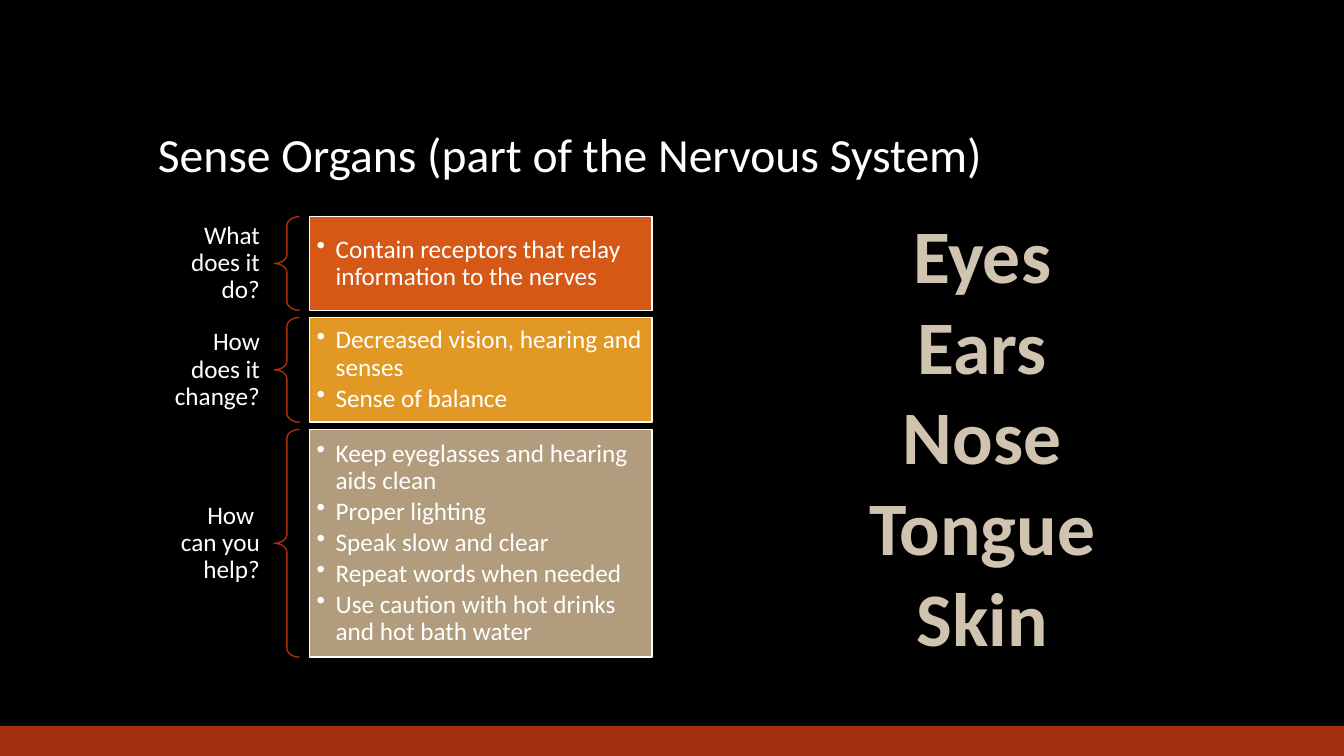
from dataclasses import dataclass

from lxml.etree import SubElement
from pptx import Presentation
from pptx.dml.color import RGBColor
from pptx.enum.shapes import MSO_SHAPE as Preset
from pptx.enum.text import MSO_ANCHOR as Anchor, PP_ALIGN as Align
from pptx.oxml.ns import qn
from pptx.util import Cm, Pt


@dataclass(frozen=True)
class Theme:
    font: str = "Calibri"
    title_size: int = 34
    body_size: int = 18
    organ_size: int = 54
    background: str = "000000"
    text: str = "FFFFFF"
    accent: str = "A5300F"
    organ: str = "D0C4B1"
    purpose: str = "D55816"
    change: str = "E19825"
    care: str = "B19C7D"


THEME = Theme()

TOPICS = [
    ("What does it do?", THEME.purpose, 2.36,
     ["Contain receptors that relay information to the nerves"]),
    ("How does it change?", THEME.change, 2.64,
     ["Decreased vision, hearing and senses", "Sense of balance"]),
    ("How \ncan you help?", THEME.care, 5.74,
     ["Keep eyeglasses and hearing aids clean",
      "Proper lighting",
      "Speak slow and clear",
      "Repeat words when needed",
      "Use caution with hot drinks and hot bath water"]),
]
ORGANS = ["Eyes", "Ears", "Nose", "Tongue", "Skin"]


def rgb(code):
    return RGBColor.from_string(code)


def add_preset(slide, preset, left, top, width, height, fill=None, line=None):
    shape = slide.shapes.add_shape(preset, Cm(left), Cm(top), Cm(width), Cm(height))
    shape.shadow.inherit = False
    if fill:
        shape.fill.solid()
        shape.fill.fore_color.rgb = rgb(fill)
    else:
        shape.fill.background()
    if line:
        shape.line.color.rgb = rgb(line)
        shape.line.width = Pt(1)
    else:
        shape.line.fill.background()
    return shape


def set_frame(frame, anchor, side=0.25, edge=0.13, wrap=True):
    frame.word_wrap = wrap
    frame.vertical_anchor = anchor
    frame.margin_left = frame.margin_right = Cm(side)
    frame.margin_top = frame.margin_bottom = Cm(edge)


def write(frame, lines, size, align=Align.LEFT, color=THEME.text, bold=False, spacing=0.9):
    for index, line in enumerate(lines):
        paragraph = frame.add_paragraph() if index else frame.paragraphs[0]
        paragraph.text = line
        paragraph.alignment = align
        paragraph.line_spacing = spacing
        for run in paragraph.runs:
            run.font.name = THEME.font
            run.font.size = Pt(size)
            run.font.bold = bold
            run.font.color.rgb = rgb(color)


def add_bullets(frame, indent):
    for paragraph in frame.paragraphs:
        paragraph.level = 1
        paragraph.space_after = Pt(2.7)
        properties = paragraph._p.get_or_add_pPr()
        properties.set("marL", str(Cm(indent)))
        properties.set("indent", str(-Cm(indent)))
        SubElement(properties, qn("a:buChar"), char="•")


def add_title(slide, left, top, width, height):
    title = slide.shapes.add_textbox(Cm(left), Cm(top), Cm(width), Cm(height))
    set_frame(title.text_frame, Anchor.BOTTOM)
    write(title.text_frame, ["Sense Organs (part of the Nervous System)"], THEME.title_size)


def add_topic(slide, left, top, width, height, question, fill, answers):
    question_width, brace_width, gap = 3.18, 0.64, 0.25
    brace_left = left + question_width
    answer_left = brace_left + brace_width + gap

    label = slide.shapes.add_textbox(Cm(left), Cm(top), Cm(question_width), Cm(height))
    set_frame(label.text_frame, Anchor.MIDDLE, side=0.36)
    write(label.text_frame, [question], THEME.body_size, Align.RIGHT)

    brace = add_preset(slide, Preset.LEFT_BRACE, brace_left, top, brace_width, height,
                       line=THEME.accent)
    brace.adjustments[0] = 0.35
    brace.adjustments[1] = 0.5

    panel = add_preset(slide, Preset.RECTANGLE, answer_left, top,
                       left + width - answer_left, height, fill, THEME.text)
    set_frame(panel.text_frame, Anchor.MIDDLE, side=0.18, edge=0.18)
    write(panel.text_frame, answers, THEME.body_size)
    add_bullets(panel.text_frame, 0.48)


def add_topics(slide, left, top, width, gap=0.18):
    for question, fill, height, answers in TOPICS:
        add_topic(slide, left, top, width, height, question, fill, answers)
        top += height + gap


def add_organs(slide, left, top, width, height):
    organs = slide.shapes.add_textbox(Cm(left), Cm(top), Cm(width), Cm(height))
    set_frame(organs.text_frame, Anchor.TOP, wrap=False)
    write(organs.text_frame, ORGANS, THEME.organ_size, Align.CENTER,
          THEME.organ, bold=True, spacing=1.0)


def main():
    deck = Presentation()
    deck.slide_width, deck.slide_height = Cm(33.87), Cm(19.05)
    slide = deck.slides.add_slide(deck.slide_layouts[6])
    slide.background.fill.solid()
    slide.background.fill.fore_color.rgb = rgb(THEME.background)

    add_preset(slide, Preset.RECTANGLE, 0, 18.29, 33.87, 0.76, THEME.accent)
    add_title(slide, 3.73, 1.3, 26.42, 3.43)
    add_topics(slide, 3.73, 5.46, 12.7)
    add_organs(slide, 21.62, 5.11, 6.27, 11.79)
    deck.save("out.pptx")


if __name__ == "__main__":
    main()
